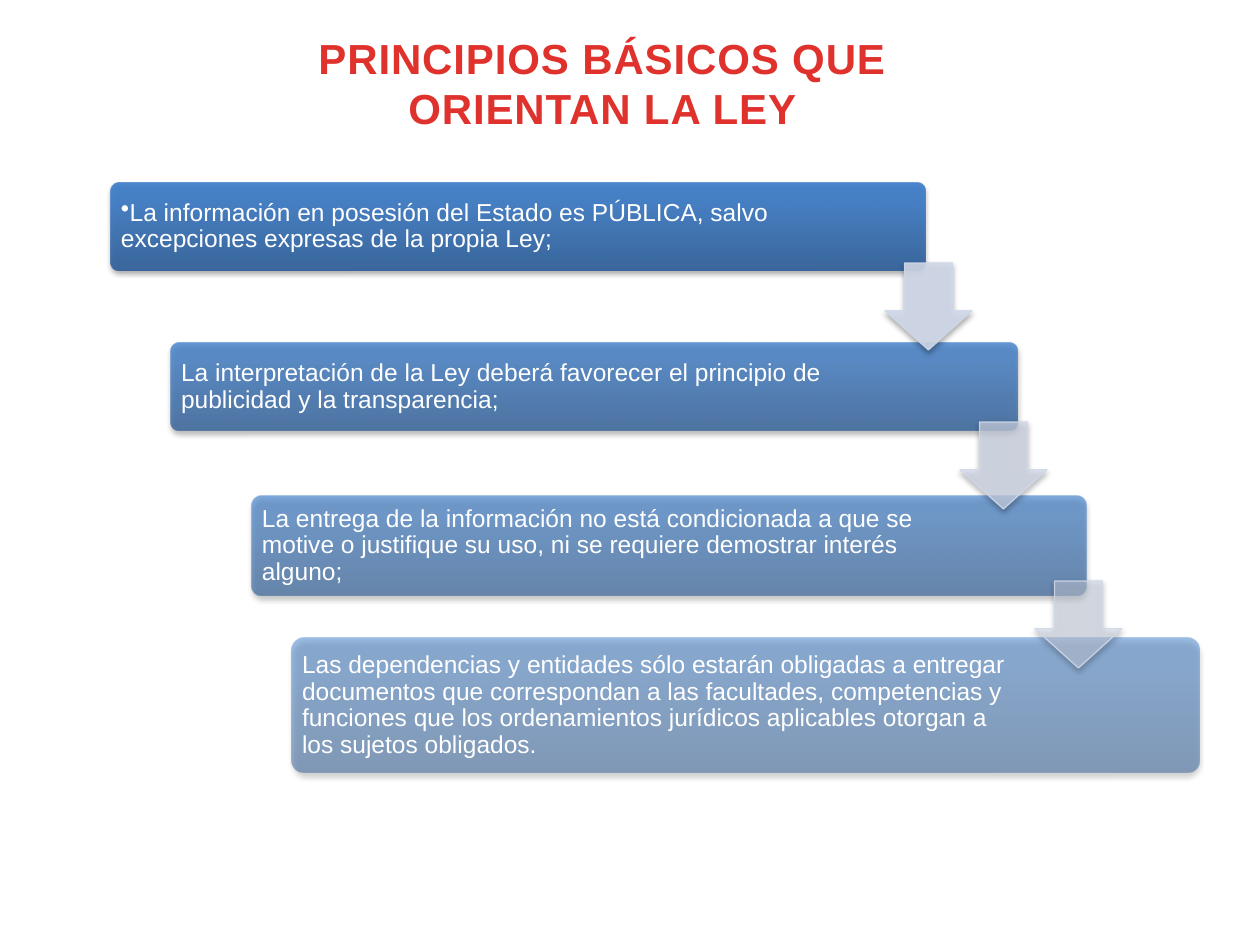
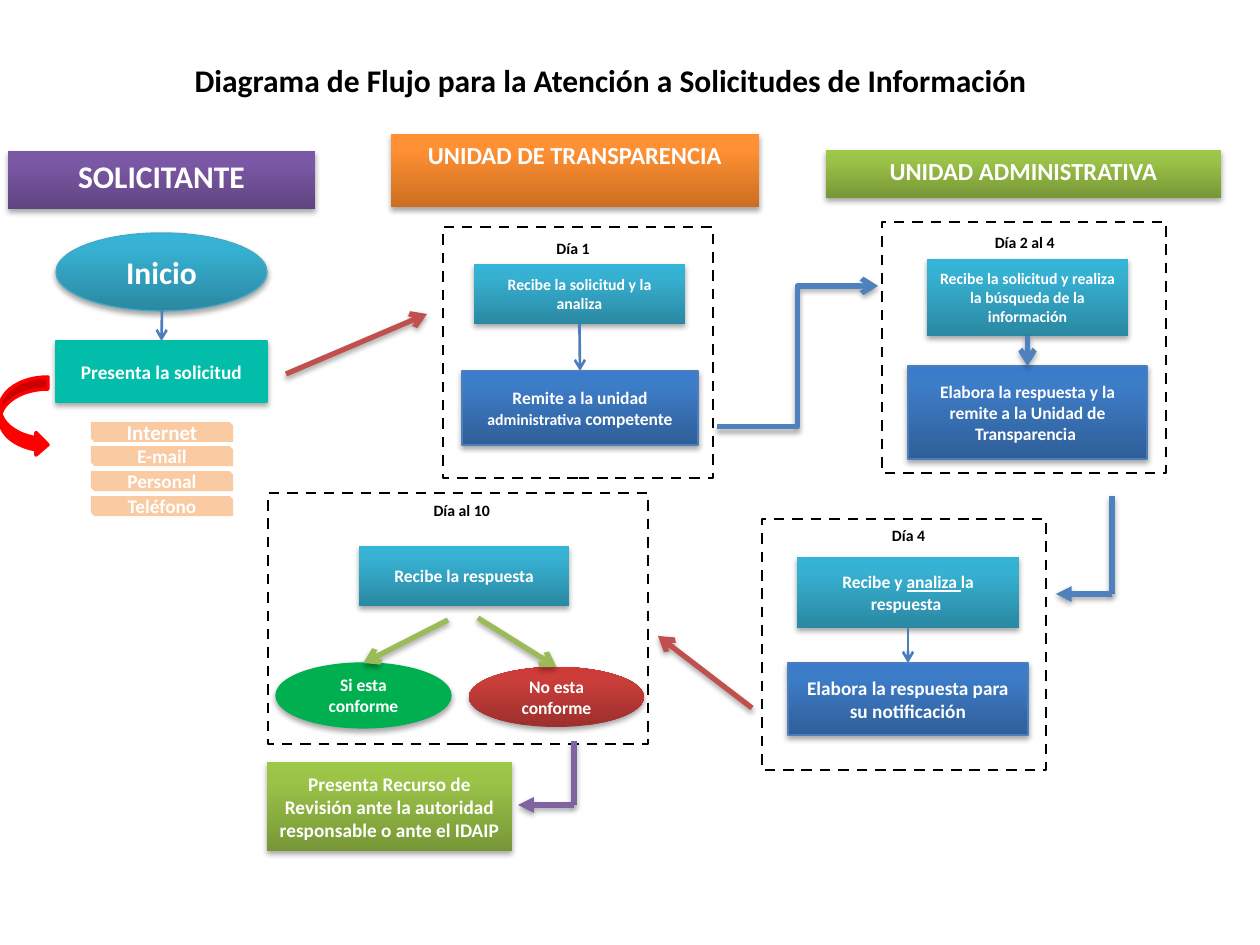
import lxml.etree
import pptx
import pptx.dml.color
import pptx.enum.dml
import pptx.enum.shapes
import pptx.enum.text
import pptx.oxml.ns
import pptx.util

EMU_PER_PX = 914400 / 126
SHAPES = pptx.enum.shapes.MSO_SHAPE
LINES = pptx.enum.shapes.MSO_CONNECTOR
ANCHOR = pptx.enum.text.MSO_ANCHOR
ALIGN = pptx.enum.text.PP_ALIGN
qn = pptx.oxml.ns.qn

COLORS = {
    "white": "FFFFFF", "black": "000000", "title_red": "E0322D",
    "pale": "D0D8E8", "turquoise": "03BDAB", "peach": "F79646",
    "green": "00B050", "red": "FF0000", "edge_blue": "4B7EBC",
    "edge_aqua": "46AAC5", "line_blue": "4F81BD", "line_red": "C0504D",
    "line_green": "9BBB59", "line_purple": "8064A2",
}
# Gradient colours from the bottom (0 %) through 80 % to the top (100 %)
GRADIENTS = {
    "blue": ("2F5F99", "3D7CC7", "3A7CCB"),
    "aqua": ("2A88A2", "37B1D2", "34B4D6"),
    "purple": ("5F4480", "7B58A6", "7C57A8"),
    "orange": ("CC6E20", "FF9034", "FF9136"),
    "olive": ("779737", "9BC348", "9DC746"),
    "crimson": ("9C2F2D", "CB3E3A", "CE3B37"),
}


def px(n):
    return pptx.util.Emu(round(n * EMU_PER_PX))


def rgb(name):
    return pptx.dml.color.RGBColor.from_string(COLORS[name])


def add_color(parent, hex_color, alpha=100):
    """Append an RGB colour element with its opacity in percent."""
    color = lxml.etree.SubElement(parent, qn("a:srgbClr"), val=hex_color)
    if alpha < 100:
        lxml.etree.SubElement(color, qn("a:alpha"), val=str(alpha * 1000))


def set_alpha(fill_element, alpha):
    color = fill_element.find(qn("a:srgbClr"))
    lxml.etree.SubElement(color, qn("a:alpha"), val=str(alpha * 1000))


def add_shadow(effects):
    shadow = lxml.etree.SubElement(
        effects, qn("a:outerShdw"), blurRad="40000", dist="23000",
        dir="5400000", rotWithShape="0")
    add_color(shadow, COLORS["black"], 35)


def paint(sp, fill, alpha):
    """Fill with a gradient, a plain colour or nothing."""
    sppr = sp._element.spPr
    if fill is None:
        sp.fill.background()
    elif fill in GRADIENTS:
        sp.fill.gradient()
        sp.fill.gradient_angle = 90
        stops = sppr.find(qn("a:gradFill")).find(qn("a:gsLst"))
        for stop in list(stops):
            stops.remove(stop)
        for place, color in zip((0, 80, 100), GRADIENTS[fill]):
            stop = lxml.etree.SubElement(stops, qn("a:gs"), pos=str(place * 1000))
            add_color(stop, color, alpha)
    else:
        sp.fill.solid()
        sp.fill.fore_color.rgb = rgb(fill)
        if alpha < 100:
            set_alpha(sppr.find(qn("a:solidFill")), alpha)


def add_box(s, kind, box, fill=None, alpha=100, line=None, weight=0.75,
            shadow=True, adjust=()):
    sp = s.shapes.add_shape(kind, *map(px, box))
    for i, value in enumerate(adjust):
        sp.adjustments[i] = value
    paint(sp, fill, alpha)
    if line:
        sp.line.color.rgb = rgb(line)
        sp.line.width = pptx.util.Pt(weight)
    else:
        sp.line.fill.background()
    sp.shadow.inherit = False
    if shadow:
        add_shadow(sp._element.spPr.find(qn("a:effectLst")))
    return sp


def write(sp, runs, size, font="Calibri", color="white", bold=True,
          align=ALIGN.CENTER, anchor=ANCHOR.MIDDLE):
    """Write one paragraph; runs is a text or a list of (text, size, underline)."""
    tf = sp.text_frame
    tf.word_wrap = True
    tf.vertical_anchor = anchor
    p = tf.paragraphs[0]
    p.alignment = align
    if isinstance(runs, str):
        runs = [(runs, size, False)]
    for text, run_size, underline in runs:
        r = p.add_run()
        r.text = text
        r.font.name = font
        r.font.size = pptx.util.Pt(run_size)
        r.font.bold = bold
        r.font.color.rgb = rgb(color)
        if underline:
            r.font.underline = True
    return p


def add_text(s, box, text, size, **style):
    tb = s.shapes.add_textbox(*map(px, box))
    return tb, write(tb, text, size, **style)


def add_title(s, box, text, size, font, color):
    return add_text(s, box, text, size, font=font, color=color,
                    anchor=ANCHOR.TOP)[1]


def add_node(s, box, fill, runs, size, kind=SHAPES.RECTANGLE, line=None,
             anchor=ANCHOR.MIDDLE):
    sp = add_box(s, kind, box, fill, line=line)
    write(sp, runs, size, anchor=anchor)
    return sp


def add_line(s, start, end, color, weight=3, head="arrow",
             kind=LINES.STRAIGHT, source=None, target=None):
    """Draw a connector; source joins at its bottom and target at its top."""
    c = s.shapes.add_connector(kind, *map(px, (*start, *end)))
    if source is not None:
        c.begin_connect(source, 2)
    if target is not None:
        c.end_connect(target, 0)
    c.line.color.rgb = rgb(color)
    c.line.width = pptx.util.Pt(weight)
    sppr = c._element.spPr
    if head:
        lxml.etree.SubElement(sppr.find(qn("a:ln")), qn("a:tailEnd"), type=head)
    effects = lxml.etree.SubElement(sppr, qn("a:effectLst"))
    if weight >= 3:
        add_shadow(effects)


def add_corner_arrow(s, start, corner, end, color):
    add_line(s, start, corner, color, head=None)
    add_line(s, corner, end, color, head="triangle")


def add_day(s, box, label_box, label):
    """Dashed frame of one stage with its day label."""
    frame = add_box(s, SHAPES.RECTANGLE, box, line="black", weight=1.5,
                    shadow=False)
    frame.line.dash_style = pptx.enum.dml.MSO_LINE.DASH
    add_text(s, label_box, label, 9, color="black", anchor=ANCHOR.TOP)


def add_steps(s, first, second, color="edge_blue", weight=1.5):
    """Two stacked steps joined by a downward arrow; each is (box, text, size)."""
    upper = add_node(s, first[0], "aqua", *first[1:])
    lower = add_node(s, second[0], "blue", *second[1:], line="edge_blue")
    add_line(s, (0, 0), (0, 0), color, weight, source=upper, target=lower)


def add_principle(s, box, alpha, text, text_width, bullet):
    add_box(s, SHAPES.ROUNDED_RECTANGLE, box, "blue", alpha, adjust=(0.1,))
    x, y, _, h = box
    tb, p = add_text(s, (x + 3, y + 3, text_width, h - 6), text, 14,
                     font="Arial", bold=False, align=ALIGN.LEFT)
    tf = tb.text_frame
    tf.margin_left = tf.margin_right = tf.margin_top = tf.margin_bottom = px(7)
    p.line_spacing = 0.9
    if bullet:
        lxml.etree.SubElement(p._p.get_or_add_pPr(), qn("a:buChar"), char="•")


def build_principles(s):
    p = add_title(s, (202, 26, 801, 115), "PRINCIPIOS BÁSICOS QUE ORIENTAN LA LEY",
                  24, "Arial", "title_red")
    p.runs[0].font._element.set("spc", "50")
    principles = [
        ((111, 183, 814, 87), 90, "La información en posesión del Estado es PÚBLICA, "
         "salvo excepciones expresas de la propia Ley;", 675),
        ((171, 343, 847, 88), 77, "La interpretación de la Ley deberá favorecer el "
         "principio de publicidad y la transparencia;", 689),
        ((252, 496, 834, 100), 63, "La entrega de la información no está condicionada a "
         "que se motive o justifique su uso, ni se requiere demostrar interés alguno;", 679),
        ((292, 638, 907, 135), 50, "Las dependencias y entidades sólo estarán obligadas a "
         "entregar documentos que correspondan a las facultades, competencias y funciones "
         "que los ordenamientos jurídicos aplicables otorgan a los sujetos obligados.", 736),
    ]
    for i, principle in enumerate(principles):
        add_principle(s, *principle, bullet=i == 0)
    for i in range(3):
        arrow = add_box(s, SHAPES.DOWN_ARROW, (885 + 75 * i, 263 + 159 * i, 87, 87),
                        "pale", 90 - 20 * i, line="pale", adjust=(0.55, 0.45))
        ln = arrow._element.spPr.find(qn("a:ln"))
        set_alpha(ln.find(qn("a:solidFill")), 90)


def build_applicant(s):
    add_node(s, (56, 233, 211, 78), "aqua", "Inicio", 18, SHAPES.OVAL, "edge_aqua")
    request = add_node(s, (56, 341, 211, 61), "turquoise", "Presenta la solicitud",
                       11, line="turquoise")
    add_line(s, (162, 311), (162, 341), "edge_blue", 1.5, target=request)
    channels = [("Internet", 12), ("E-mail", 11), ("Personal", 11), ("Teléfono", 11)]
    for i, (channel, size) in enumerate(channels):
        sp = add_box(s, SHAPES.SNIP_2_DIAG_RECTANGLE, (91, 422 + i * 74 // 3, 142, 20),
                     "peach", 50, shadow=False)
        write(sp, channel, size)
    add_box(s, SHAPES.CURVED_RIGHT_ARROW, (0, 377, 48, 79), "red", line="red",
            weight=2, shadow=False, adjust=(0.25, 0.47, 0.25))


def build_stages(s):
    add_day(s, (443, 227, 270, 251), (527, 233, 92, 33), "Día 1")
    add_steps(s, ((474, 264, 211, 60), "Recibe la solicitud y la analiza", 9),
              ((462, 371, 236, 74), [("Remite a la unidad ", 10, False),
                                     ("administrativa", 9, False),
                                     (" competente", 10, False)], 10))
    add_day(s, (882, 222, 284, 251), (961, 227, 131, 37), "Día 2 al 4 ")
    add_steps(s, ((927, 259, 201, 77),
                  "Recibe la solicitud y realiza la búsqueda de la información", 9),
              ((908, 366, 239, 93),
               "Elabora la respuesta y la remite a la Unidad de Transparencia ", 10),
              "line_blue", 3)
    add_day(s, (762, 519, 284, 251), (843, 520, 131, 37), "Día 4")
    add_steps(s, ((797, 557, 222, 71), [("Recibe y ", 10, False), ("analiza ", 10, True),
                                        ("la respuesta ", 10, False)], 10),
              ((788, 663, 240, 72), "Elabora la respuesta para su notificación", 11))


def build_outcome(s):
    add_day(s, (268, 493, 380, 251), (398, 495, 131, 37), "Día al 10 ")
    add_node(s, (359, 546, 210, 60), "aqua", "Recibe la respuesta", 10)
    disagree = add_node(s, (469, 667, 175, 60), "crimson", "No esta conforme", 10,
                        SHAPES.OVAL)
    agree = add_node(s, (276, 663, 175, 65), "green", "Si esta conforme", 10,
                     SHAPES.OVAL, "green")
    add_line(s, (448, 620), (364, 663), "line_green", target=agree)
    add_line(s, (478, 618), (557, 667), "line_green", target=disagree)
    add_node(s, (267, 762, 245, 89), "olive", "Presenta Recurso de Revisión ante la "
             "autoridad responsable o ante el IDAIP", 11)
    add_corner_arrow(s, (574, 741), (574, 805), (518, 805), "line_purple")


def build_flow(s):
    add_title(s, (162, 55, 905, 51),
              "Diagrama de Flujo para la Atención a Solicitudes de Información ",
              18, "Calibri", "black")
    headers = [
        ((8, 151, 307, 58), "purple", "SOLICITANTE", 18),
        ((391, 134, 368, 73), "orange", "UNIDAD DE TRANSPARENCIA", 14),
        ((826, 150, 395, 48), "olive", "UNIDAD ADMINISTRATIVA", 14),
    ]
    for header in headers:
        add_node(s, *header, anchor=ANCHOR.TOP)
    build_applicant(s)
    build_stages(s)
    build_outcome(s)
    add_line(s, (286, 374), (427, 314), "line_red")
    add_line(s, (717, 427), (878, 286), "line_blue", kind=LINES.ELBOW)
    add_line(s, (752, 708), (658, 636), "line_red")
    add_corner_arrow(s, (1112, 496), (1112, 594), (1056, 594), "line_blue")


def main():
    prs = pptx.Presentation()
    prs.slide_width, prs.slide_height = px(1260), px(945)
    for build in (build_principles, build_flow):
        build(prs.slides.add_slide(prs.slide_layouts[6]))
    prs.save("out.pptx")


if __name__ == "__main__":
    main()
